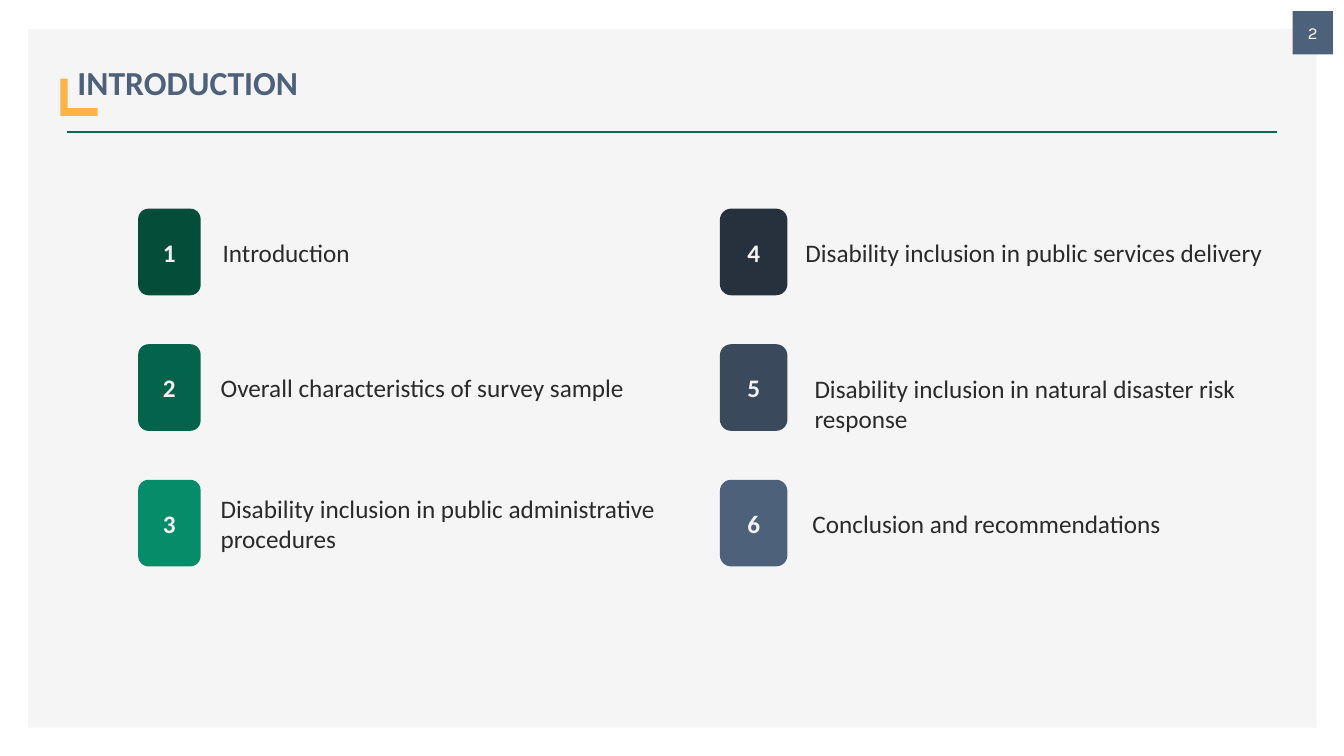
"""Build the agenda slide with six numbered topics in two columns."""
from pptx import Presentation
from pptx.dml.color import RGBColor
from pptx.enum.shapes import MSO_CONNECTOR, MSO_SHAPE as SHAPE
from pptx.enum.text import MSO_ANCHOR as ANCHOR, PP_ALIGN as ALIGN
from pptx.oxml.ns import qn
from pptx.util import Inches, Pt
from lxml.etree import SubElement

TITLE = "INTRODUCTION"
PAGE = "2"
PANEL, SLATE, GREEN, ORANGE = "F5F5F5", "4E617A", "076B51", "FDB347"
INK, PALE, WHITE = "2A2A2A", "F2F2F2", "FFFFFF"

# badge left, badge width, topics as (text, badge fill, label left, label height, label drop)
COLUMNS = [
    (1.37, 0.62, [
        ("Introduction", "034D39", 2.11, 0.4, 0),
        ("Overall characteristics of survey sample", "04644B", 2.09, 0.4, 0),
        ("Disability inclusion in public administrative procedures",
         "068C69", 2.09, 0.71, 0),
    ]),
    (7.14, 0.67, [
        ("Disability inclusion in public services delivery", "27303D", 7.89, 0.4, 0),
        ("Disability inclusion in natural disaster risk response",
         "3B495C", 7.98, 0.71, 0.16),
        ("Conclusion and recommendations", SLATE, 7.96, 0.4, 0),
    ]),
]
FIRST_TOP, ROW_STEP, BADGE_H, LABEL_W = 2.07, 1.345, 0.86, 4.57
RIGHT_LABEL_W = 4.88

prs = Presentation()
prs.slide_width, prs.slide_height = Inches(13.33), Inches(7.5)
shapes = prs.slides.add_slide(prs.slide_layouts[6]).shapes


def rgb(value):
    return RGBColor.from_string(value)


def add_block(x, y, w, h, fill, kind=SHAPE.RECTANGLE):
    sp = shapes.add_shape(kind, Inches(x), Inches(y), Inches(w), Inches(h))
    sp.shadow.inherit = False
    sp.fill.solid()
    sp.fill.fore_color.rgb = rgb(fill)
    sp.line.fill.background()
    return sp


def write(sp, text, size=18, color=INK, bold=False, font="Calibri",
          align=ALIGN.LEFT, spacing=None):
    tf = sp.text_frame
    tf.word_wrap = True
    tf.vertical_anchor = ANCHOR.MIDDLE
    p = tf.paragraphs[0]
    p.alignment = align
    if spacing:
        p.line_spacing = spacing
    r = p.add_run()
    r.text = text
    r.font.size, r.font.bold, r.font.name = Pt(size), bold, font
    r.font.color.rgb = rgb(color)


add_block(0.28, 0.29, 12.78, 6.93, PANEL)
rule = shapes.add_connector(MSO_CONNECTOR.STRAIGHT, Inches(0.66), Inches(1.31),
                            Inches(12.67), Inches(1.31))
rule.line.color.rgb = rgb(GREEN)
rule.line.width = Pt(2)
SubElement(rule._element.spPr, qn("a:effectLst"))

write(add_block(12.82, 0.11, 0.4, 0.43, SLATE), PAGE,
      size=12, color=WHITE, font="Karla", align=ALIGN.CENTER)
add_block(0.6, 0.78, 0.37, 0.37, ORANGE)
write(add_block(0.67, 0.36, 9, 0.71, PANEL), TITLE,
      size=24, color=SLATE, bold=True, spacing=1.5)

number = 0
for (badge_x, badge_w, topics), label_w in zip(COLUMNS, (LABEL_W, RIGHT_LABEL_W)):
    for row, (text, fill, label_x, label_h, drop) in enumerate(topics):
        number += 1
        top = FIRST_TOP + row * ROW_STEP
        badge = add_block(badge_x, top, badge_w, BADGE_H, fill, SHAPE.ROUNDED_RECTANGLE)
        badge.adjustments[0] = 0.167
        write(badge, str(number), color=PALE, bold=True, align=ALIGN.CENTER)
        label_y = top + (BADGE_H - label_h) / 2 + drop
        write(shapes.add_textbox(Inches(label_x), Inches(label_y),
                                 Inches(label_w), Inches(label_h)), text)

prs.save("out.pptx")
